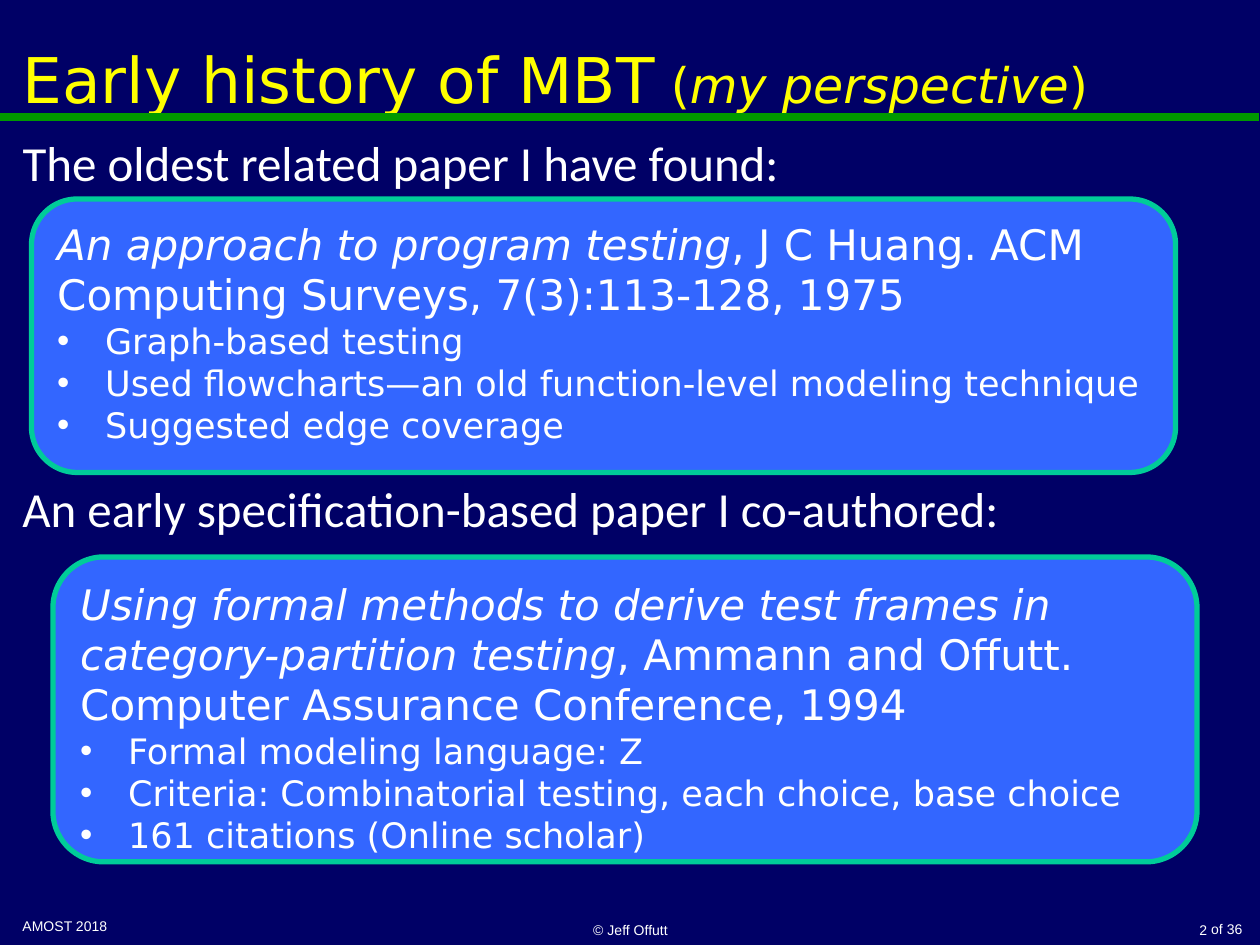
from dataclasses import dataclass

from lxml.etree import SubElement
from pptx import Presentation
from pptx.dml.color import RGBColor
from pptx.enum.shapes import MSO_CONNECTOR as Connector, MSO_SHAPE as Shape
from pptx.enum.text import MSO_ANCHOR as Anchor, MSO_AUTO_SIZE as AutoSize, PP_ALIGN as Align
from pptx.oxml.ns import qn
from pptx.util import Inches, Pt


@dataclass(frozen=True)
class Theme:
    background: str = "000066"
    title: str = "FFFF00"
    text: str = "FFFFFF"
    rule: str = "009900"
    card: str = "3366FF"
    border: str = "00CC99"
    main_font: str = "DejaVu Sans"
    heading_font: str = "Calibri"
    footer_font: str = "Arial"
    title_size: int = 36
    heading_size: int = 28
    citation_size: int = 24
    bullet_size: int = 20
    footer_size: int = 8


THEME = Theme()

# Runs are (text, size, italic)
TITLE = [
    ("Early history of MBT", THEME.title_size, False),
    (" (", THEME.heading_size, False),
    ("my perspective", THEME.heading_size, True),
    (")", THEME.heading_size, False),
]
HEADINGS = [
    ("The oldest related paper I have found:", 1),
    ("An early specification-based paper I co-authored:", 3.75),
]
# Citation paragraphs hold (text, italic) runs
PAPERS = [
    {
        "box": (0.25, 1.58, 9.08, 2.17),
        "citation": [
            [("An approach to program testing", True),
             (", J C Huang. ACM Computing Surveys, 7(3):113-128, 1975", False)],
        ],
        "points": [
            "Graph-based testing",
            "Used flowcharts—an old function-level modeling technique",
            "Suggested edge coverage",
        ],
    },
    {
        "box": (0.42, 4.42, 9.08, 2.42),
        "citation": [
            [("Using formal methods to derive test frames in category-partition testing", True),
             (", Ammann and Offutt.", False)],
            [("Computer Assurance Conference, 1994", False)],
        ],
        "points": [
            "Formal modeling language: Z",
            "Criteria: Combinatorial testing, each choice, base choice",
            "161 citations (Online scholar)",
        ],
    },
]
FOOTERS = [
    ("AMOST 2018", (0.08, 7.23, 2.33, 0.26), Align.LEFT, Anchor.TOP),
    ("© Jeff Offutt", (3.42, 7.17, 3.17, 0.33), Align.CENTER, Anchor.BOTTOM),
    ("2", (7.87, 7.17, 1.81, 0.33), Align.RIGHT, Anchor.BOTTOM),
    ("of 36", (9.5, 7.26, 0.46, 0.24), Align.RIGHT, Anchor.TOP),
]


def color(value):
    return RGBColor.from_string(value)


def place(shape, box):
    shape.left, shape.top, shape.width, shape.height = map(Inches, box)


def prepare_frame(shape, anchor=Anchor.TOP):
    frame = shape.text_frame
    frame.word_wrap = True
    frame.auto_size = AutoSize.NONE
    frame.vertical_anchor = anchor
    return frame


def next_paragraph(frame):
    """Return the empty first paragraph, or a new one after it."""
    first = frame.paragraphs[0]
    return frame.add_paragraph() if first.runs else first


def set_bullet(paragraph, character=None, indent=0):
    """Give a hanging bullet, or remove any inherited one."""
    properties = paragraph._p.get_or_add_pPr()
    properties.set("marL", str(Inches(indent)))
    properties.set("indent", str(-Inches(indent)))
    if character:
        SubElement(properties, qn("a:buFont"), typeface="Arial")
        SubElement(properties, qn("a:buChar"), char=character)
    else:
        SubElement(properties, qn("a:buNone"))


def add_run(paragraph, text, size, font=THEME.main_font, fill=THEME.text, italic=False):
    run = paragraph.add_run()
    run.text = text
    run.font.name = font
    run.font.size = Pt(size)
    run.font.italic = italic
    run.font.color.rgb = color(fill)


def add_rule(slide):
    rule = slide.shapes.add_connector(
        Connector.STRAIGHT, Inches(0), Inches(0.93), Inches(9.99), Inches(0.93))
    rule.line.color.rgb = color(THEME.rule)
    rule.line.width = Pt(4.5)
    SubElement(rule._element.spPr, qn("a:effectLst"))


def fill_title(shape):
    place(shape, (0.08, 0, 8.76, 1.25))
    paragraph = prepare_frame(shape, Anchor.MIDDLE).paragraphs[0]
    paragraph.alignment = Align.LEFT
    for text, size, italic in TITLE:
        add_run(paragraph, text, size, fill=THEME.title, italic=italic)


def fill_heading(shape, text, top):
    place(shape, (0.08, top, 9.83, 0.75))
    paragraph = prepare_frame(shape).paragraphs[0]
    set_bullet(paragraph)
    paragraph.space_before = Pt(0)
    add_run(paragraph, text, THEME.heading_size, THEME.heading_font)


def add_paper(slide, paper):
    card = slide.shapes.add_shape(Shape.ROUNDED_RECTANGLE, *map(Inches, paper["box"]))
    card.shadow.inherit = False
    card.fill.solid()
    card.fill.fore_color.rgb = color(THEME.card)
    card.line.color.rgb = color(THEME.border)
    card.line.width = Pt(3)
    frame = prepare_frame(card)
    for runs in paper["citation"]:
        paragraph = next_paragraph(frame)
        paragraph.alignment = Align.LEFT
        for text, italic in runs:
            add_run(paragraph, text, THEME.citation_size, italic=italic)
    for point in paper["points"]:
        paragraph = next_paragraph(frame)
        set_bullet(paragraph, "•", 0.38)
        paragraph.alignment = Align.LEFT
        add_run(paragraph, point, THEME.bullet_size)


def add_footer(slide, text, box, alignment, anchor):
    footer = slide.shapes.add_textbox(*map(Inches, box))
    paragraph = prepare_frame(footer, anchor).paragraphs[0]
    paragraph.alignment = alignment
    add_run(paragraph, text, THEME.footer_size, THEME.footer_font)


def main():
    presentation = Presentation()
    presentation.slide_width, presentation.slide_height = Inches(10), Inches(7.5)
    slide = presentation.slides.add_slide(presentation.slide_layouts[1])
    slide.background.fill.solid()
    slide.background.fill.fore_color.rgb = color(THEME.background)

    add_rule(slide)
    fill_title(slide.shapes.title)
    second_heading = slide.shapes.add_textbox(0, 0, 0, 0)
    for shape, heading in zip((slide.placeholders[1], second_heading), HEADINGS):
        fill_heading(shape, *heading)
    for paper in PAPERS:
        add_paper(slide, paper)
    for footer in FOOTERS:
        add_footer(slide, *footer)
    presentation.save("out.pptx")


if __name__ == "__main__":
    main()
